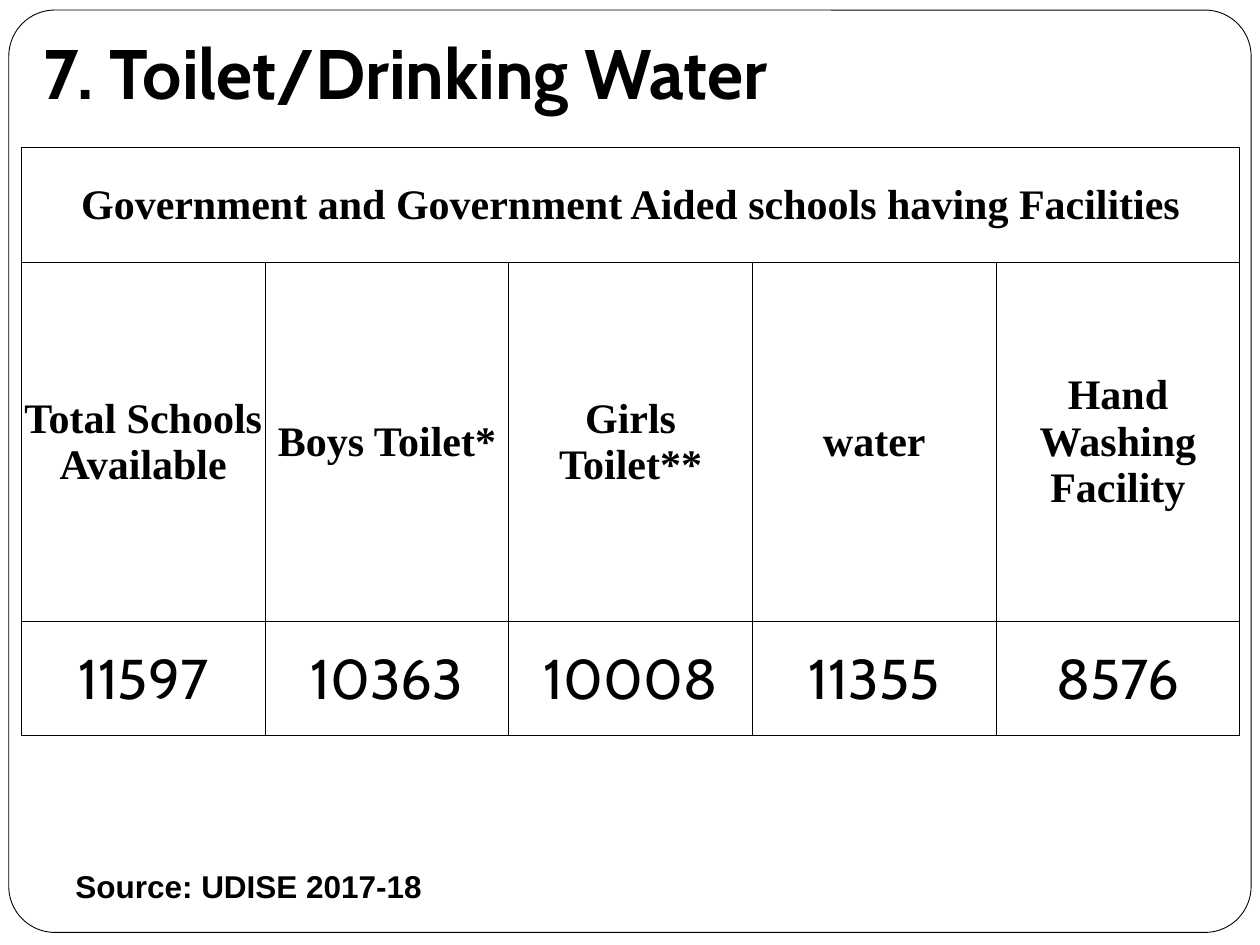
import lxml.etree
import pptx
import pptx.dml.color
import pptx.enum.shapes
import pptx.enum.text
import pptx.oxml.ns
import pptx.util

Inches = pptx.util.Inches
Pt = pptx.util.Pt
Align = pptx.enum.text.PP_ALIGN
Anchor = pptx.enum.text.MSO_ANCHOR

COLORS = {"ink": "000000", "paper": "FFFFFF"}
HEADING = "Government and Government Aided schools having Facilities"
COUNTS = {
    "Total Schools Available": "11597",
    "Boys Toilet*": "10363",
    "Girls Toilet**": "10008",
    "water": "11355",
    "Hand Washing Facility": "8576",
}


def color(name):
    return pptx.dml.color.RGBColor.from_string(COLORS[name])


def write(frame, text, font="Arial", size=18, bold=True, align=Align.LEFT):
    para = frame.paragraphs[0]
    para.alignment = align
    run = para.add_run()
    run.text = text
    run.font.name = font
    run.font.size = Pt(size)
    run.font.bold = bold
    run.font.color.rgb = color("ink")


def border(cell, width=0.5):
    """Draw a solid line on all four sides of a table cell."""
    props = cell._tc.get_or_add_tcPr()
    qn = pptx.oxml.ns.qn
    for side in ("lnL", "lnR", "lnT", "lnB"):
        line = lxml.etree.SubElement(props, qn("a:" + side), w=str(Pt(width)))
        fill = lxml.etree.SubElement(line, qn("a:solidFill"))
        lxml.etree.SubElement(fill, qn("a:srgbClr"), val=COLORS["ink"])


class Deck:
    """Holds the fonts and the current slide."""

    head = {"font": "Times New Roman", "size": 24, "align": Align.CENTER}
    count = {"font": "Cabin", "size": 32, "bold": False, "align": Align.CENTER}

    def __init__(self, slide):
        self.slide = slide

    def frame(self, left, top, width, height):
        kind = pptx.enum.shapes.MSO_SHAPE.ROUNDED_RECTANGLE
        shape = self.slide.shapes.add_shape(
            kind, Inches(left), Inches(top), Inches(width), Inches(height))
        shape.adjustments[0] = 0.05
        shape.shadow.inherit = False
        shape.fill.solid()
        shape.fill.fore_color.rgb = color("paper")
        shape.line.color.rgb = color("ink")
        shape.line.width = Pt(0.5)

    def text(self, left, top, width, height, text, anchor=Anchor.TOP,
             bottom=0.05, **style):
        box = self.slide.shapes.add_textbox(
            Inches(left), Inches(top), Inches(width), Inches(height))
        frame = box.text_frame
        frame.word_wrap = True
        frame.vertical_anchor = anchor
        frame.margin_bottom = Inches(bottom)
        write(frame, text, **style)

    def cell(self, cell, text, style):
        cell.margin_left = cell.margin_right = cell.margin_top = Inches(0.01)
        cell.margin_bottom = 0
        cell.vertical_anchor = Anchor.MIDDLE
        if text:
            write(cell.text_frame, text, **style)
        border(cell)
        cell.fill.background()

    def table(self, left, top, width, heights, rows):
        """Build a table from (texts, style) rows; the first row is merged."""
        cols = len(rows[-1][0])
        table = self.slide.shapes.add_table(
            len(rows), cols, Inches(left), Inches(top),
            Inches(width), Inches(sum(heights))).table
        for col in table.columns:
            col.width = Inches(width / cols)
        table.cell(0, 0).merge(table.cell(0, cols - 1))
        for r, (texts, style) in enumerate(rows):
            table.rows[r].height = Inches(heights[r])
            for c in range(cols):
                text = texts[c] if c < len(texts) else ""
                self.cell(table.cell(r, c), text, style)


def main():
    prs = pptx.Presentation()
    prs.slide_width, prs.slide_height = Inches(10), Inches(7.5)
    deck = Deck(prs.slides.add_slide(prs.slide_layouts[6]))
    deck.frame(0.07, 0.08, 9.86, 7.32)
    deck.text(0.25, 0.3, 9.25, 0.7, "7. Toilet/Drinking Water",
              anchor=Anchor.BOTTOM, bottom=0.1, font="Cabin", size=40)
    deck.text(0.5, 6.83, 7.67, 0.4, "Source: UDISE 2017-18")
    deck.table(0.17, 1.17, 9.67, [0.91, 2.85, 0.91], [
        ([HEADING], deck.head),
        (list(COUNTS), deck.head),
        (list(COUNTS.values()), deck.count),
    ])
    prs.save("out.pptx")


if __name__ == "__main__":
    main()
